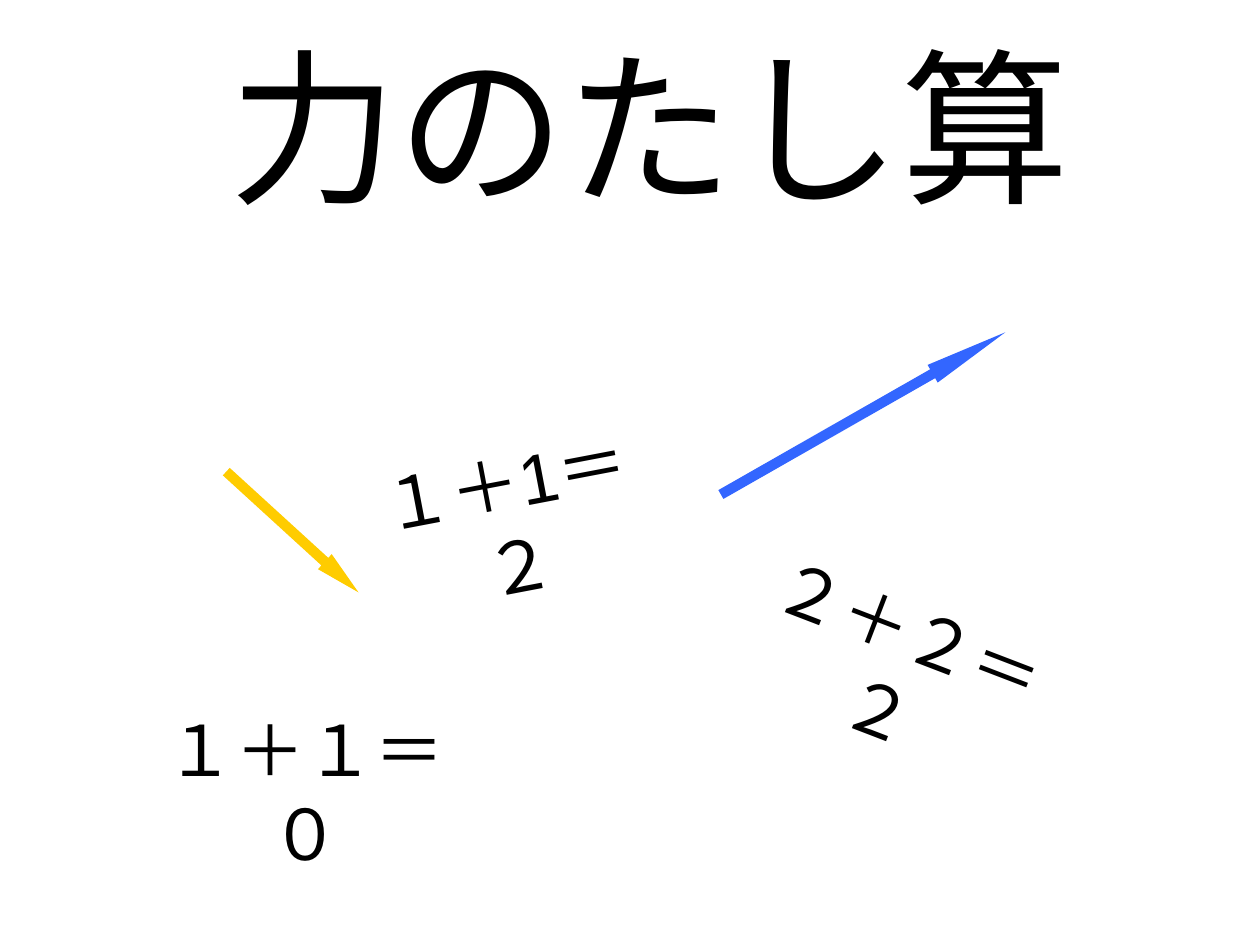
import pptx
import pptx.dml.color
import pptx.enum.shapes
import pptx.enum.text
import pptx.util
from pptx.util import Cm

BLACK = pptx.dml.color.RGBColor(0x00, 0x00, 0x00)
BLUE = pptx.dml.color.RGBColor(0x33, 0x66, 0xFF)
YELLOW = pptx.dml.color.RGBColor(0xFF, 0xCC, 0x00)
FONT = "Arial"
SUM_WIDTH, SUM_HEIGHT = Cm(6.5), Cm(1.93)
ARROW_HEIGHT = Cm(0.41)


def add_text(slide, text, left, top, width, height, size=40, rotation=0,
             anchor=pptx.enum.text.MSO_ANCHOR.TOP):
    """Add a centred, wrapping line of text."""
    shape = slide.shapes.add_textbox(left, top, width, height)
    shape.rotation = rotation
    frame = shape.text_frame
    frame.word_wrap = True
    frame.vertical_anchor = anchor
    paragraph = frame.paragraphs[0]
    paragraph.alignment = pptx.enum.text.PP_ALIGN.CENTER
    run = paragraph.add_run()
    run.text = text
    run.font.name = FONT
    run.font.size = pptx.util.Pt(size)
    run.font.color.rgb = BLACK


def add_force_arrow(slide, left, top, width, rotation, head_ratio, color):
    """Add a force arrow; head_ratio is head length over arrow height."""
    shape = slide.shapes.add_shape(
        pptx.enum.shapes.MSO_SHAPE.RIGHT_ARROW, left, top, width, ARROW_HEIGHT)
    shape.adjustments[0] = 0.5
    shape.adjustments[1] = head_ratio
    shape.rotation = rotation
    shape.shadow.inherit = False
    shape.fill.solid()
    shape.fill.fore_color.rgb = color
    shape.line.fill.background()


def main():
    presentation = pptx.Presentation()
    presentation.slide_width = Cm(25.4)
    presentation.slide_height = Cm(19.05)
    slide = presentation.slides.add_slide(presentation.slide_layouts[6])

    # Title
    add_text(slide, "力のたし算", Cm(2.29), Cm(0.71), Cm(21.62), Cm(3.61),
             size=96, anchor=pptx.enum.text.MSO_ANCHOR.MIDDLE)

    # Sums of forces
    for text, left, top, rotation in (
        ("１＋１＝０", 2.9, 14.12, 0),
        ("２＋２＝２", 15.09, 11.73, 21),
        ("１＋1＝２", 6.91, 8.74, 349.1),
    ):
        add_text(slide, text, Cm(left), Cm(top), SUM_WIDTH, SUM_HEIGHT,
                 rotation=rotation)

    # Force arrows
    add_force_arrow(slide, Cm(14.1), Cm(8.13), Cm(6.6), 330.3, 4.11, BLUE)
    add_force_arrow(slide, Cm(4.09), Cm(10.52), Cm(3.61), 42.4, 2.24, YELLOW)

    presentation.save("out.pptx")


if __name__ == "__main__":
    main()
